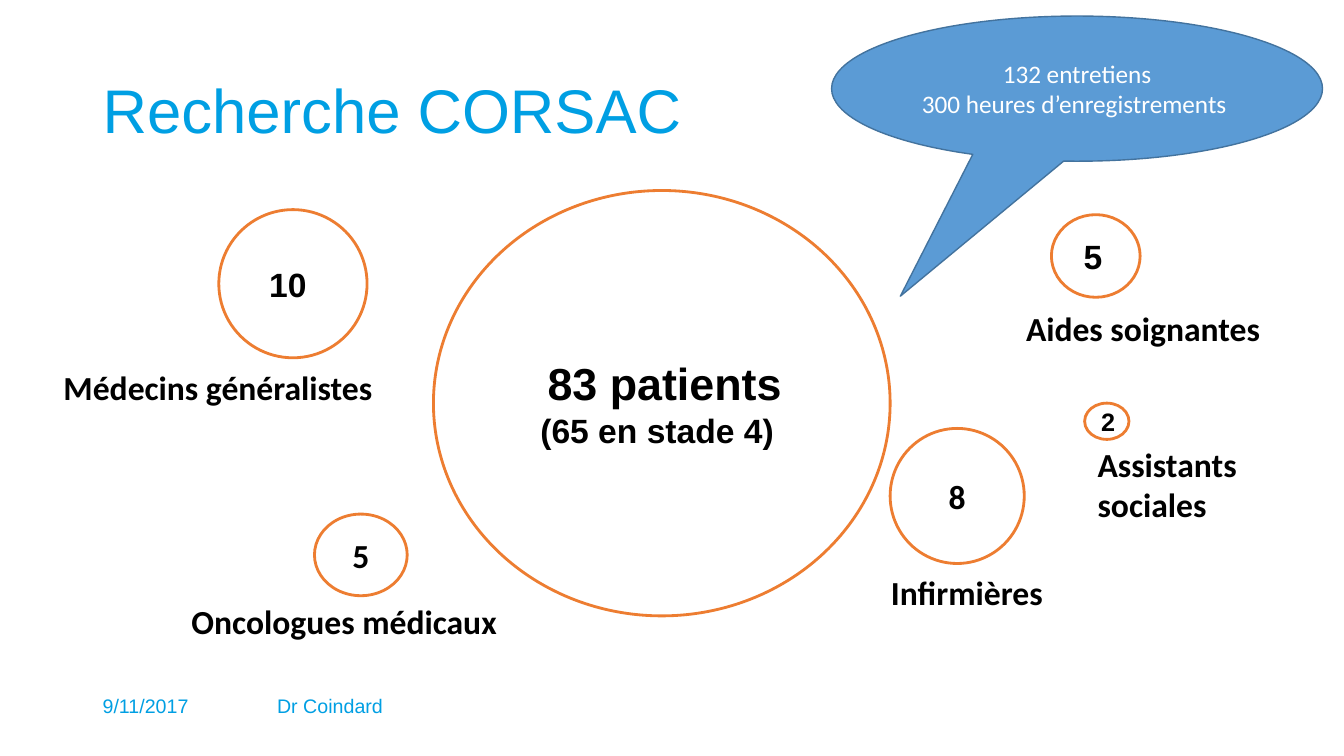
from dataclasses import dataclass

from pptx import Presentation
from pptx.dml.color import RGBColor
from pptx.enum.shapes import MSO_SHAPE
from pptx.enum.text import MSO_ANCHOR, PP_ALIGN
from pptx.shapes.autoshape import Shape
from pptx.slide import Slide
from pptx.util import Inches, Pt

OVAL = MSO_SHAPE.OVAL
CALLOUT = MSO_SHAPE.OVAL_CALLOUT
MIDDLE = MSO_ANCHOR.MIDDLE
TOP = MSO_ANCHOR.TOP
LEFT = PP_ALIGN.LEFT
CENTER = PP_ALIGN.CENTER
WIDTH = Inches(13.33)
HEIGHT = Inches(7.5)


@dataclass(frozen=True)
class Theme:
    cyan: str = "009FE3"
    orange: str = "ED7D31"
    blue: str = "5B9BD5"
    navy: str = "43739E"
    black: str = "000000"
    white: str = "FFFFFF"
    sans: str = "Arial"
    body: str = "Calibri"
    title: int = 44
    main: int = 32
    label: int = 24
    small: int = 18
    foot: int = 14


THEME = Theme()


@dataclass(frozen=True)
class Box:
    x: float
    y: float
    w: float
    h: float

    def place(self) -> tuple[int, int, int, int]:
        return (int(WIDTH * self.x / 100), int(HEIGHT * self.y / 100),
                int(WIDTH * self.w / 100), int(HEIGHT * self.h / 100))


@dataclass(frozen=True)
class Line:
    text: str
    size: int = THEME.label
    font: str = THEME.body
    color: str = THEME.black
    bold: bool = True
    align: PP_ALIGN = LEFT
    indent: float = 0
    lead: float = 1


@dataclass(frozen=True)
class Item:
    box: Box
    lines: tuple[Line, ...]


def head(text: str, size: int) -> tuple[Line, ...]:
    return (Line(text, size, THEME.sans, THEME.cyan, False, lead=0.9),)


def note(text: str) -> Line:
    return Line(text, THEME.small, color=THEME.white, bold=False, align=CENTER)


HEADS = (
    Item(Box(6.9, 5.33, 86.25, 19.33), head("Recherche CORSAC", THEME.title)),
    Item(Box(6.9, 91.07, 11.85, 5.07), head("9/11/2017", THEME.foot)),
    Item(Box(19.88, 91.07, 19.8, 5.07), head("Dr Coindard", THEME.foot)),
)
RINGS = (
    Item(Box(23.4, 68, 6.9, 10.8), (Line("5", align=CENTER),)),
    Item(Box(66.23, 56.67, 9.98, 17.87), (Line("8", align=CENTER),)),
    Item(Box(32.25, 25.2, 33.98, 56.27), (
        Line("83 patients", THEME.main, THEME.sans, indent=2.78),
        Line("(65 en stade 4) ", font=THEME.sans, align=CENTER))),
    Item(Box(78.23, 28.4, 6.6, 10.93), (Line("5", font=THEME.sans, indent=0.7),)),
    Item(Box(16.28, 27.73, 11.03, 19.6), (Line("10", font=THEME.sans, indent=1.4),)),
    Item(Box(80.7, 53.33, 3.3, 4.8), (
        Line("2", THEME.small, THEME.sans, align=CENTER),)),
)
LABELS = (
    Item(Box(3.98, 47.87, 27.6, 6.67), (Line("Médecins généralistes"),)),
    Item(Box(80.93, 58, 15.9, 12.13), (Line("Assistants sociales"),)),
    Item(Box(13.5, 78.8, 27.6, 6.67), (Line("Oncologues médicaux"),)),
    Item(Box(65.55, 74.93, 15.9, 6.67), (Line("Infirmières"),)),
    Item(Box(75.6, 40.13, 28.05, 6.67), (Line("Aides soignantes"),)),
)
BUBBLE = Item(Box(61.88, 2.13, 36.53, 19.2), (
    note("132 entretiens"), note("300 heures d’enregistrements ")))


def write(shape: Shape, lines: tuple[Line, ...], anchor: MSO_ANCHOR) -> None:
    frame = shape.text_frame
    frame.word_wrap = True
    frame.vertical_anchor = anchor
    for i, line in enumerate(lines):
        para = frame.add_paragraph() if i else frame.paragraphs[0]
        para.alignment = line.align
        para.line_spacing = line.lead
        if line.indent:
            props = para._p.get_or_add_pPr()
            props.set("marL", str(int(WIDTH * line.indent / 100)))
            props.set("indent", "0")
        run = para.add_run()
        run.text = line.text
        run.font.size = Pt(line.size)
        run.font.name = line.font
        run.font.bold = line.bold
        run.font.color.rgb = RGBColor.from_string(line.color)


def label(slide: Slide, item: Item, anchor: MSO_ANCHOR) -> None:
    write(slide.shapes.add_textbox(*item.box.place()), item.lines, anchor)


def form(slide: Slide, item: Item, kind: MSO_SHAPE, edge: str, width: float) -> Shape:
    shape = slide.shapes.add_shape(kind, *item.box.place())
    shape.shadow.inherit = False
    shape.fill.background()
    shape.line.color.rgb = RGBColor.from_string(edge)
    shape.line.width = Pt(width)
    write(shape, item.lines, MIDDLE)
    return shape


def main() -> None:
    deck = Presentation()
    deck.slide_width = WIDTH
    deck.slide_height = HEIGHT
    slide = deck.slides.add_slide(deck.slide_layouts[6])
    for item in HEADS:
        label(slide, item, MIDDLE)
    for item in RINGS:
        form(slide, item, OVAL, THEME.orange, 2)
    for item in LABELS:
        label(slide, item, TOP)
    bubble = form(slide, BUBBLE, CALLOUT, THEME.navy, 1)
    bubble.fill.solid()
    bubble.fill.fore_color.rgb = RGBColor.from_string(THEME.blue)
    bubble.adjustments[0] = -0.36
    bubble.adjustments[1] = 1.43
    deck.save("out.pptx")


if __name__ == "__main__":
    main()
